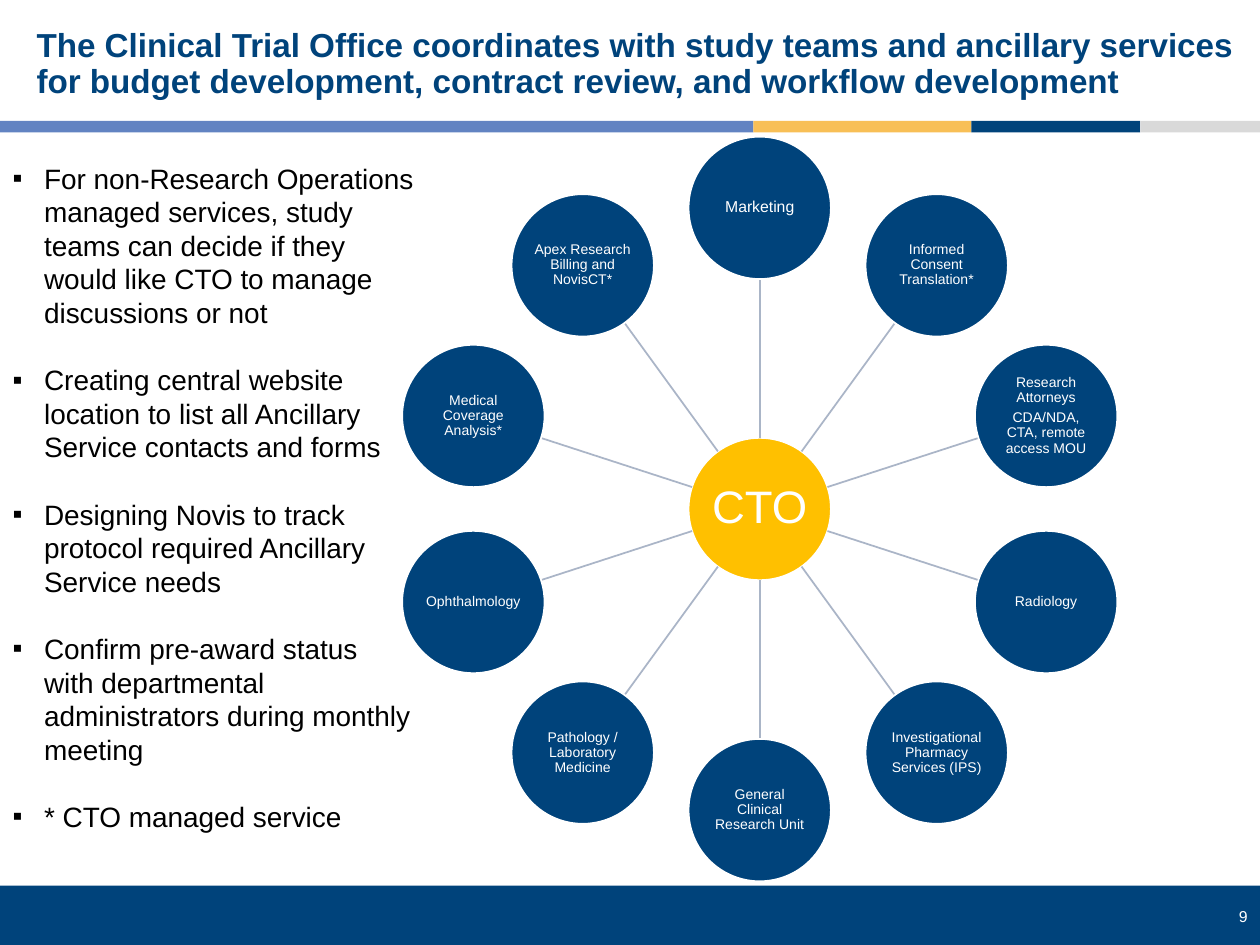
import math
from dataclasses import dataclass

import pptx
import pptx.dml.color
import pptx.enum.shapes
import pptx.enum.text
import pptx.oxml.ns
import pptx.util
from lxml import etree

Inches = pptx.util.Inches
Pt = pptx.util.Pt
Align = pptx.enum.text.PP_ALIGN
Anchor = pptx.enum.text.MSO_ANCHOR
ShapeType = pptx.enum.shapes.MSO_SHAPE


@dataclass(frozen=True)
class Theme:
    font: str = "Arial"
    navy: str = "00437B"
    blue: str = "6283C2"
    amber: str = "F8BF56"
    gray: str = "D9D9D9"
    gold: str = "FFC000"
    spoke: str = "AAB5C7"
    white: str = "FFFFFF"
    black: str = "000000"
    title_size: int = 19
    body_size: int = 16
    hub_size: int = 26
    node_size: int = 8
    large_node_size: int = 9
    number_size: int = 9


TITLE = ("The Clinical Trial Office coordinates with study teams and ancillary "
         "services for budget development, contract review, and workflow development")
BULLETS = [
    "For non-Research Operations managed services, study teams can decide if they "
    "would like CTO to manage discussions or not",
    "Creating central website location to list all Ancillary Service contacts and forms",
    "Designing Novis to track protocol required Ancillary Service needs",
    "Confirm pre-award status with departmental administrators during monthly meeting",
    "* CTO managed service",
]
# Clockwise from the top of the ring; each entry lists its paragraphs.
SERVICES = [
    ["Marketing"],
    ["Informed Consent Translation*"],
    ["Research Attorneys", "CDA/NDA, CTA, remote access MOU"],
    ["Radiology"],
    ["Investigational Pharmacy Services (IPS)"],
    ["General Clinical Research Unit"],
    ["Pathology / Laboratory Medicine"],
    ["Ophthalmology"],
    ["Medical Coverage Analysis*"],
    ["Apex Research Billing and NovisCT*"],
]
HUB_CENTER = (6.03, 4.04)
RING_RADIUS = 2.39
DIAMETER = 1.13


class SlideBuilder:
    def __init__(self, slide, theme):
        self.slide = slide
        self.theme = theme

    def color(self, value):
        return pptx.dml.color.RGBColor.from_string(value)

    def add_text(self, paragraph, text, size, color, bold=False):
        run = paragraph.add_run()
        run.text = text
        run.font.name = self.theme.font
        run.font.size = Pt(size)
        run.font.bold = bold
        run.font.color.rgb = self.color(color)

    def paragraphs(self, frame, texts):
        """Yield each text with its paragraph, adding paragraphs as needed."""
        for index, text in enumerate(texts):
            yield frame.add_paragraph() if index else frame.paragraphs[0], text

    def place(self, shape, left, top, width, height):
        shape.left, shape.top = Inches(left), Inches(top)
        shape.width, shape.height = Inches(width), Inches(height)

    def title(self, text, *box):
        shape = self.slide.shapes.title
        self.place(shape, *box)
        frame = shape.text_frame
        frame.word_wrap = True
        frame.auto_size = pptx.enum.text.MSO_AUTO_SIZE.NONE
        frame.vertical_anchor = Anchor.MIDDLE
        paragraph = frame.paragraphs[0]
        paragraph.alignment = Align.LEFT
        paragraph.line_spacing = 0.9
        self.add_text(paragraph, text, self.theme.title_size, self.theme.navy, bold=True)

    def bullets(self, texts, *box):
        shape = self.slide.placeholders[1]
        self.place(shape, *box)
        frame = shape.text_frame
        frame.word_wrap = True
        frame.auto_size = pptx.enum.text.MSO_AUTO_SIZE.NONE
        size = self.theme.body_size
        for index, (paragraph, text) in enumerate(self.paragraphs(frame, texts)):
            self.add_bullet(paragraph)
            paragraph.space_before = Pt(1.2 * size if index else 0)
            self.add_text(paragraph, text, size, self.theme.black)

    def add_bullet(self, paragraph):
        properties = paragraph._p.get_or_add_pPr()
        properties.set("marL", str(Inches(0.25)))
        properties.set("indent", str(-Inches(0.25)))
        qualified = pptx.oxml.ns.qn
        etree.SubElement(properties, qualified("a:buFont"), typeface=self.theme.font)
        etree.SubElement(properties, qualified("a:buChar"), char="▪")

    def shape(self, kind, fill, *box):
        shape = self.slide.shapes.add_shape(kind, *map(Inches, box))
        shape.shadow.inherit = False
        shape.fill.solid()
        shape.fill.fore_color.rgb = self.color(fill)
        return shape

    def bar(self, fill, *box):
        self.shape(ShapeType.RECTANGLE, fill, *box).line.fill.background()

    def circle(self, center, fill, texts, size):
        left, top = (value - DIAMETER / 2 for value in center)
        shape = self.shape(ShapeType.OVAL, fill, left, top, DIAMETER, DIAMETER)
        shape.line.color.rgb = self.color(self.theme.white)
        shape.line.width = Pt(1)
        frame = shape.text_frame
        frame.word_wrap = True
        frame.vertical_anchor = Anchor.MIDDLE
        frame.margin_left = frame.margin_right = Inches(0.01)
        frame.margin_top = frame.margin_bottom = Inches(0.01)
        for paragraph, text in self.paragraphs(frame, texts):
            paragraph.alignment = Align.CENTER
            paragraph.line_spacing = 0.9
            paragraph.space_after = Pt(0.35 * size)
            self.add_text(paragraph, text, size, self.theme.white)

    def spoke(self, start, end):
        connector = self.slide.shapes.add_connector(
            pptx.enum.shapes.MSO_CONNECTOR.STRAIGHT, *map(Inches, (*start, *end)))
        connector.line.color.rgb = self.color(self.theme.spoke)
        connector.line.width = Pt(1)
        etree.SubElement(connector._element.spPr, pptx.oxml.ns.qn("a:effectLst"))

    def hub_and_spokes(self, hub_text, services):
        theme = self.theme
        self.circle(HUB_CENTER, theme.gold, [hub_text], theme.hub_size)
        for index, texts in enumerate(services):
            angle = 2 * math.pi * index / len(services)

            def on_ray(distance):
                return (HUB_CENTER[0] + distance * math.sin(angle),
                        HUB_CENTER[1] - distance * math.cos(angle))

            self.spoke(on_ray(DIAMETER / 2), on_ray(RING_RADIUS - DIAMETER / 2))
            size = theme.node_size if index else theme.large_node_size
            self.circle(on_ray(RING_RADIUS), theme.navy, texts, size)

    def slide_number(self, text, *box):
        frame = self.slide.shapes.add_textbox(*map(Inches, box)).text_frame
        frame.word_wrap = True
        paragraph = frame.paragraphs[0]
        paragraph.alignment = Align.RIGHT
        self.add_text(paragraph, text, self.theme.number_size, self.theme.white)


def main():
    presentation = pptx.Presentation()
    presentation.slide_width = Inches(10)
    presentation.slide_height = Inches(7.5)
    theme = Theme()
    slide = presentation.slides.add_slide(presentation.slide_layouts[1])
    builder = SlideBuilder(slide, theme)

    builder.bar(theme.navy, 0, 7.03, 10, 0.47)
    builder.slide_number("9", 9.31, 7.15, 0.69, 0.25)
    edges = [0, 5.98, 7.71, 9.05, 10]
    fills = [theme.blue, theme.amber, theme.navy, theme.gray]
    for fill, left, right in zip(fills, edges, edges[1:]):
        builder.bar(fill, left, 0.96, right - left, 0.09)

    builder.hub_and_spokes("CTO", SERVICES)
    builder.title(TITLE, 0.19, 0.17, 9.81, 0.69)
    builder.bullets(BULLETS, 0, 1.23, 3.39, 5.48)
    presentation.save("out.pptx")


if __name__ == "__main__":
    main()
